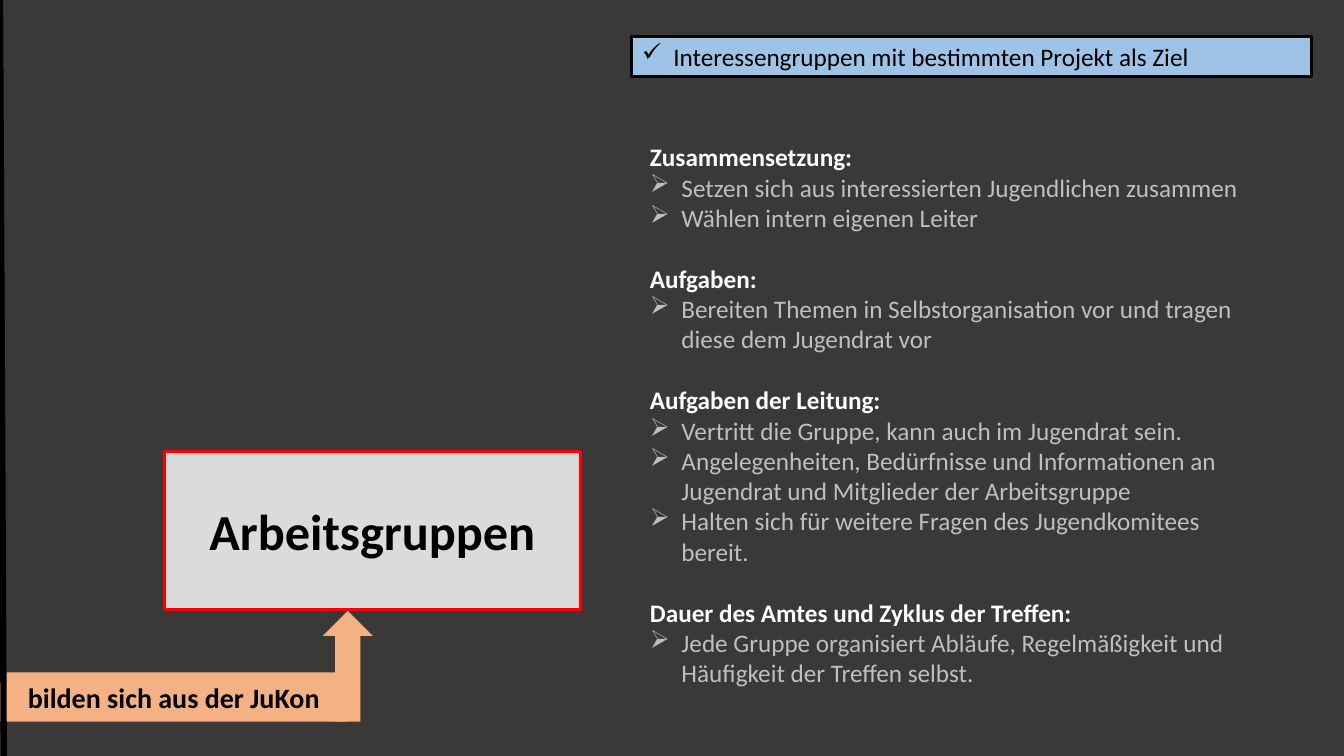
from lxml import etree
from pptx import Presentation
from pptx.dml.color import RGBColor
from pptx.enum.shapes import MSO_CONNECTOR, MSO_SHAPE
from pptx.enum.text import MSO_ANCHOR, MSO_AUTO_SIZE, PP_ALIGN
from pptx.oxml.ns import qn
from pptx.util import Pt

RECTANGLE = MSO_SHAPE.RECTANGLE
UP_ARROW = MSO_SHAPE.UP_ARROW
STRAIGHT = MSO_CONNECTOR.STRAIGHT
MIDDLE = MSO_ANCHOR.MIDDLE
TOP = MSO_ANCHOR.TOP
NO_AUTOFIT = MSO_AUTO_SIZE.NONE
FIT_SHAPE = MSO_AUTO_SIZE.SHAPE_TO_FIT_TEXT
CENTER = PP_ALIGN.CENTER
LEFT = PP_ALIGN.LEFT

COLORS = {
    "background": "3B3838",
    "group_fill": "DBDBDB",
    "group_border": "FF0000",
    "origin": "F4B183",
    "banner": "9DC3E6",
    "black": "000000",
    "heading": "FFFFFF",
    "detail": "BFBFBF",
}
FONT = "Calibri"
BODY_SIZE = 18
LINE_HEIGHT = 22
INDENT = 22.5

SECTIONS = [
    ("Zusammensetzung:", [
        "Setzen sich aus interessierten Jugendlichen zusammen",
        "Wählen intern eigenen Leiter",
    ]),
    ("Aufgaben:", [
        "Bereiten Themen in Selbstorganisation vor und tragen diese dem Jugendrat vor",
    ]),
    ("Aufgaben der Leitung:", [
        "Vertritt die Gruppe, kann auch im Jugendrat sein.",
        "Angelegenheiten, Bedürfnisse und Informationen an Jugendrat und Mitglieder der Arbeitsgruppe",
        "Halten sich für weitere Fragen des Jugendkomitees bereit.",
    ]),
    ("Dauer des Amtes und Zyklus der Treffen:", [
        "Jede Gruppe organisiert Abläufe, Regelmäßigkeit und Häufigkeit der Treffen selbst.",
    ]),
]


def rgb(name):
    return RGBColor.from_string(COLORS[name])


def paint(shape, fill, border=None):
    shape.fill.solid()
    shape.fill.fore_color.rgb = rgb(fill)
    if border:
        shape.line.color.rgb = rgb(border)
        shape.line.width = Pt(2.25)
    else:
        shape.line.fill.background()


def add_block(shapes, kind, box, fill, border=None):
    block = shapes.add_shape(kind, *map(Pt, box))
    block.shadow.inherit = False
    paint(block, fill, border)
    return block


def write(paragraph, text, size, color, bold=False, align=LEFT):
    paragraph.text = text
    paragraph.alignment = align
    font = paragraph.runs[0].font
    font.name = FONT
    font.size = Pt(size)
    font.bold = bold
    font.color.rgb = rgb(color)


def add_bullet(paragraph, symbol):
    properties = paragraph._p.get_or_add_pPr()
    properties.set("marL", str(Pt(INDENT)))
    properties.set("indent", str(-Pt(INDENT)))
    etree.SubElement(properties, qn("a:buChar")).set("char", symbol)


def add_group_title(slide, left, top, width, height):
    title = slide.shapes.title
    title.left, title.top, title.width, title.height = map(Pt, (left, top, width, height))
    paint(title, "group_fill", "group_border")
    frame = title.text_frame
    frame.auto_size = NO_AUTOFIT
    frame.vertical_anchor = MIDDLE
    write(frame.paragraphs[0], "Arbeitsgruppen", 36, "black", True, CENTER)


def add_origin(slide, left, top, width, height):
    bar_height = 35.3
    arrow_width = 36
    bar_width = width - arrow_width / 2
    shapes = slide.shapes.add_group_shape().shapes
    bar_box = (left, top + height - bar_height, bar_width, bar_height)
    bar = add_block(shapes, RECTANGLE, bar_box, "origin")
    bar.text_frame.vertical_anchor = MIDDLE
    write(bar.text_frame.paragraphs[0], "bilden sich aus der JuKon", 20, "black", True, CENTER)
    arrow_box = (left + width - arrow_width, top, arrow_width, height)
    add_block(shapes, UP_ARROW, arrow_box, "origin")


def add_edge(slide, left, top, width, height):
    edge = slide.shapes.add_connector(
        STRAIGHT, Pt(left), Pt(top), Pt(left + width), Pt(top + height))
    edge.line.color.rgb = rgb("black")
    edge.line.width = Pt(4.5)
    etree.SubElement(edge._element.spPr, qn("a:effectLst"))


def add_sections(slide, left, top, width, height):
    details = slide.shapes.add_textbox(Pt(left), Pt(top), Pt(width), Pt(height))
    frame = details.text_frame
    frame.word_wrap = True
    frame.auto_size = FIT_SHAPE
    frame.margin_top = Pt(3.6 + LINE_HEIGHT)
    for index, (heading, points) in enumerate(SECTIONS):
        paragraph = frame.add_paragraph() if index else frame.paragraphs[0]
        write(paragraph, heading, BODY_SIZE, "heading", True)
        if index:
            paragraph.space_before = Pt(LINE_HEIGHT)
        for point in points:
            paragraph = frame.add_paragraph()
            write(paragraph, point, BODY_SIZE, "detail")
            add_bullet(paragraph, "➢")


def add_banner(slide, left, top, width, height):
    banner = add_block(slide.shapes, RECTANGLE, (left, top, width, height), "banner", "black")
    frame = banner.text_frame
    frame.word_wrap = True
    frame.auto_size = FIT_SHAPE
    frame.vertical_anchor = TOP
    paragraph = frame.paragraphs[0]
    write(paragraph, "Interessengruppen mit bestimmten Projekt als Ziel", BODY_SIZE, "black")
    add_bullet(paragraph, "✓")


def main():
    deck = Presentation()
    deck.slide_width, deck.slide_height = Pt(960), Pt(540)
    slide = deck.slides.add_slide(deck.slide_layouts[5])
    slide.background.fill.solid()
    slide.background.fill.fore_color.rgb = rgb("background")
    add_group_title(slide, 117.4, 322.6, 297.4, 113)
    add_origin(slide, 0, 436.3, 266.4, 79.2)
    add_edge(slide, 0, 0, 2.7, 540)
    add_sections(slide, 457.2, 75.6, 453.6, 422)
    add_banner(slide, 451.4, 25.9, 485.3, 29)
    deck.save("out.pptx")


if __name__ == "__main__":
    main()
